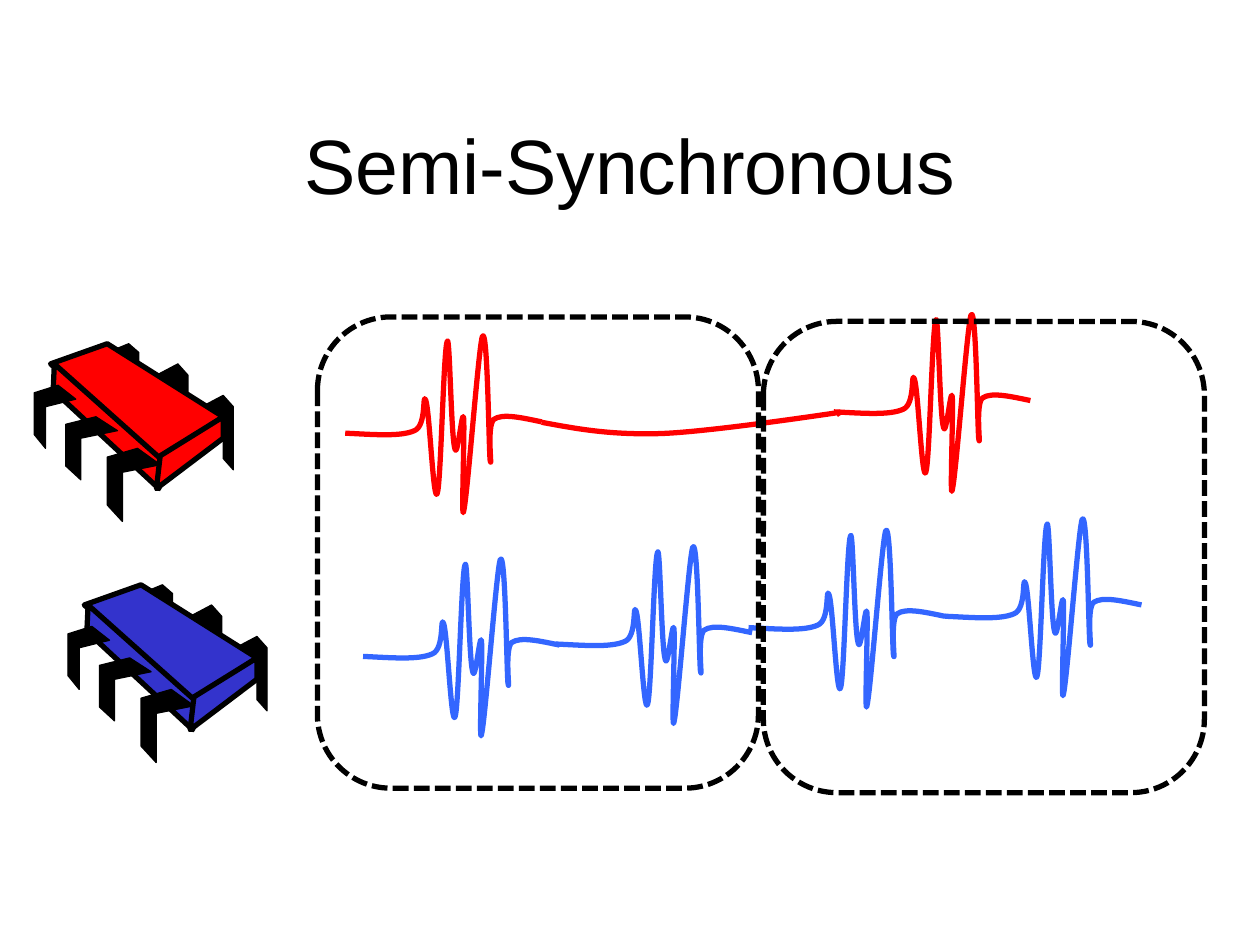
"""Build the Semi-Synchronous slide: two chips and their signal traces in two time frames."""
from pptx import Presentation
from pptx.dml.color import RGBColor
from pptx.enum.dml import MSO_LINE
from pptx.enum.shapes import MSO_SHAPE as Shape
from pptx.enum.text import MSO_ANCHOR as Anchor, PP_ALIGN as Align
from pptx.oxml.ns import qn
from pptx.util import Cm, Pt
from lxml.etree import SubElement

BLACK = RGBColor(0x00, 0x00, 0x00)
RED = RGBColor(0xFF, 0x00, 0x00)
CHIP_BLUE = RGBColor(0x33, 0x33, 0xCC)
TRACE_BLUE = RGBColor(0x33, 0x66, 0xFF)
UNIT = Cm(2.54) / 100

BACK_LEG = [(133, 50), (150, 41), (158, 50), (158, 100), (150, 91), (150, 58), (133, 66)]
BACK_LEGS = [
    BACK_LEG,
    [(x - 36, y - 25) for x, y in BACK_LEG],
    [(58, 7), (75, 0), (83, 7), (83, 50), (75, 43), (75, 14), (58, 21)],
]
BODY_FACES = [
    [(58, 0), (150, 58), (99, 93), (13, 16)],
    [(16, 16), (100, 91), (99, 115), (15, 37)],
    [(150, 58), (150, 75), (97, 115), (100, 89)],
]
FRONT_LEGS = [
    [(82, 83), (100, 96), (70, 102), (70, 141), (58, 128), (58, 90)],
    [(49, 58), (66, 69), (37, 75), (37, 108), (25, 97), (25, 64)],
    [(19, 33), (33, 44), (9, 50), (9, 83), (0, 72), (0, 39)],
]
BURST = [
    (0, 84),
    (22, 85), (44, 87), (55, 82),
    (65, 78), (61, 50), (64, 58),
    (67, 67), (70, 140), (73, 132),
    (76, 125), (78, 17), (81, 11),
    (83, 5), (84, 86), (87, 96),
    (89, 106), (93, 63), (94, 72),
    (95, 80), (92, 157), (94, 146),
    (97, 135), (106, 13), (109, 7),
    (113, 0), (114, 94), (115, 105),
    (117, 116), (112, 78), (118, 73),
    (125, 68), (141, 72), (156, 75),
]
IDLE = [
    (0, 8),
    (27, 13), (53, 18), (93, 17),
    (132, 16), (237, 0), (237, 0),
    (237, 0), (234, 2), (234, 2),
]


def add_outline(shapes, points, left, top, color, width, close):
    builder = shapes.build_freeform(*points[0], scale=UNIT)
    builder.add_line_segments(points[1:], close=close)
    shape = builder.convert_to_shape(Cm(left), Cm(top))
    shape.shadow.inherit = False
    shape.line.color.rgb = color
    shape.line.width = Pt(width)
    return shape


def add_trace(shapes, points, left, top, color):
    shape = add_outline(shapes, points, left, top, color, 3, False)
    shape.fill.background()
    outline = shape.element.xpath(".//a:path")[0]
    segments = outline.findall(qn("a:lnTo"))
    for start in range(0, len(segments), 3):
        curve = SubElement(outline, qn("a:cubicBezTo"))
        for segment in segments[start:start + 3]:
            curve.append(segment[0])
            outline.remove(segment)


presentation = Presentation()
presentation.slide_width = Cm(25.4)
presentation.slide_height = Cm(19.05)
slide = presentation.slides.add_slide(presentation.slide_layouts[5])

title = slide.shapes.title
title.left, title.top, title.width, title.height = Cm(1.9), Cm(1.7), Cm(21.6), Cm(3.18)
title.text_frame.text = "Semi-Synchronous"
title.text_frame.vertical_anchor = Anchor.MIDDLE
paragraph = title.text_frame.paragraphs[0]
paragraph.alignment = Align.CENTER
paragraph.font.name = "Arial"
paragraph.font.size = Pt(44)
paragraph.font.color.rgb = BLACK

for left, top, color in [(0.69, 6.93, RED), (1.37, 11.79, CHIP_BLUE)]:
    chip = slide.shapes.add_group_shape()
    for parts, fill, width in [(BACK_LEGS, BLACK, 0.75), (BODY_FACES, color, 3), (FRONT_LEGS, BLACK, 0.75)]:
        for points in parts:
            part = add_outline(chip.shapes, points, left, top, BLACK, width, True)
            part.fill.solid()
            part.fill.fore_color.rgb = fill

for points, left, top, color in [
    (BURST, 6.96, 6.6, RED),
    (IDLE, 10.92, 8.31, RED),
    (BURST, 16.81, 6.17, RED),
    (BURST, 7.32, 11.1, TRACE_BLUE),
    (BURST, 11.2, 10.85, TRACE_BLUE),
    (BURST, 15.09, 10.52, TRACE_BLUE),
    (BURST, 19.05, 10.29, TRACE_BLUE),
]:
    add_trace(slide.shapes, points, left, top, color)

for left, top in [(6.4, 6.39), (15.39, 6.48)]:
    frame = slide.shapes.add_shape(Shape.ROUNDED_RECTANGLE, Cm(left), Cm(top), Cm(8.89), Cm(9.5))
    frame.shadow.inherit = False
    frame.fill.background()
    frame.line.color.rgb = BLACK
    frame.line.width = Pt(3)
    frame.line.dash_style = MSO_LINE.SQUARE_DOT

presentation.save("out.pptx")
